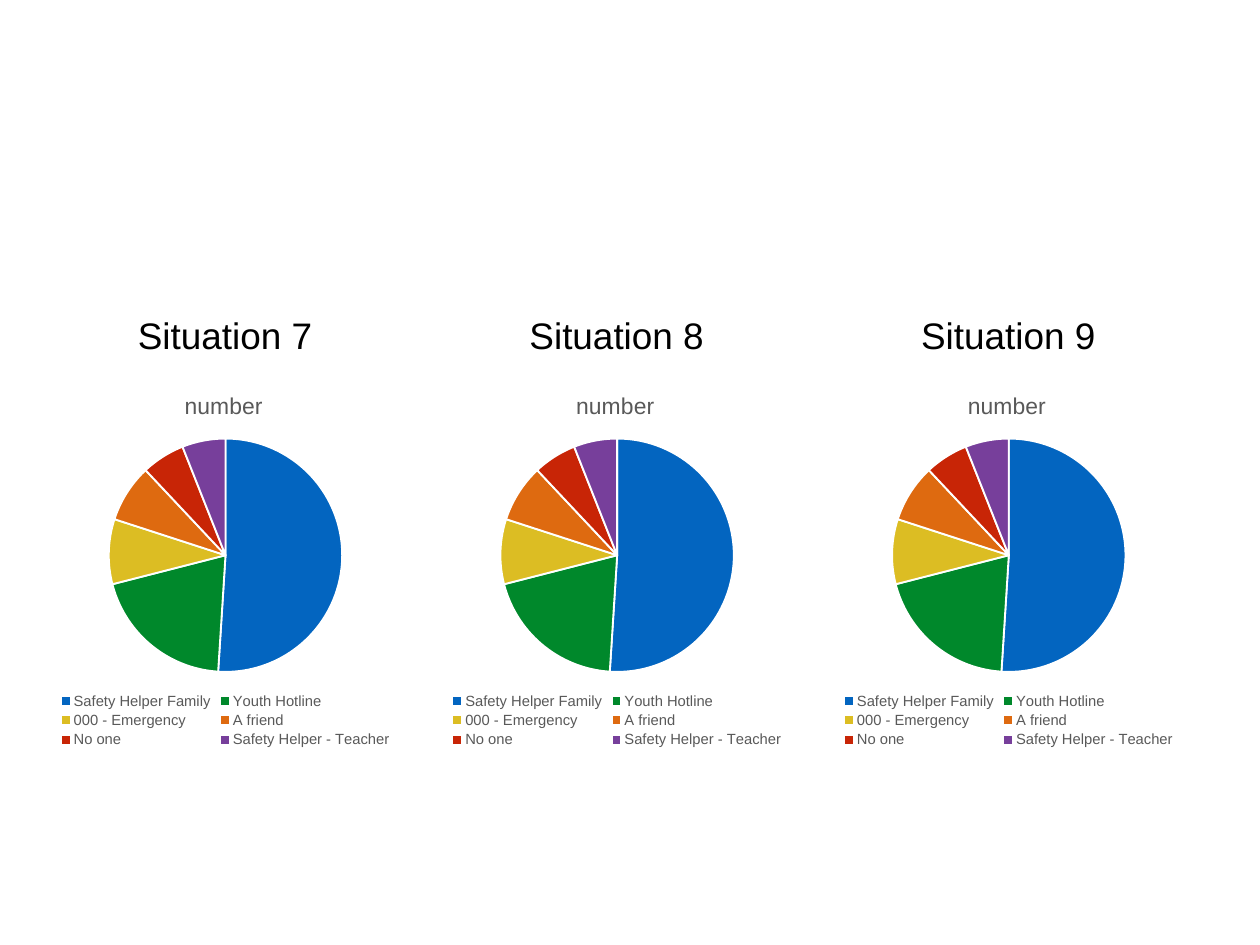
from lxml import etree
from pptx import Presentation
from pptx import util as u
from pptx.chart import data as cd
from pptx.dml.color import RGBColor
from pptx.enum import chart as ch, text as t
from pptx.oxml import ns

INK = {"text": "000000", "grey": "595959", "edge": "FFFFFF"}
# Answers: name, value, slice colour
HELP = [
    ("Safety Helper Family", 51, "0365C0"),
    ("Youth Hotline", 20, "00882B"),
    ("000 - Emergency", 9, "DCBD23"),
    ("A friend", 8, "DE6A10"),
    ("No one", 6, "C82506"),
    ("Safety Helper - Teacher", 6, "773F9B"),
]
WIDE, HIGH = 14.22, 10.67
STEP = 4.42 / WIDE  # column pitch as a share of the width


class Deck:
    face = "Arial"

    def __init__(self):
        self.prs = Presentation()
        self.prs.slide_width = u.Inches(WIDE)
        self.prs.slide_height = u.Inches(HIGH)
        self.slide = self.prs.slides.add_slide(self.prs.slide_layouts[6])

    def box(self, x, y, w, h):
        """Turn shares of the slide into lengths."""
        return (u.Inches(x * WIDE), u.Inches(y * HIGH),
                u.Inches(w * WIDE), u.Inches(h * HIGH))

    def font(self, font, size, ink):
        font.name, font.size, font.bold = self.face, u.Pt(size), False
        font.color.rgb = RGBColor.from_string(INK[ink])

    def label(self, words, *area):
        frame = self.slide.shapes.add_textbox(*self.box(*area)).text_frame
        frame.word_wrap = True
        frame.vertical_anchor = t.MSO_ANCHOR.MIDDLE
        for side in ("left", "top", "right", "bottom"):
            setattr(frame, "margin_" + side, u.Inches(0.06))
        line = frame.paragraphs[0]
        line.text = words
        line.alignment = t.PP_ALIGN.CENTER
        self.font(line.font, 30, "text")

    def place(self, item, **parts):
        """Fix a chart part at shares of the chart's size."""
        old = item.find(ns.qn("c:layout"))
        if old is None:
            old = etree.Element(ns.qn("c:layout"))
            prior = item.find(ns.qn("c:tx"))
            item.insert(0 if prior is None else 1, old)
        spot = etree.SubElement(old, ns.qn("c:manualLayout"))
        for key, val in parts.items():
            etree.SubElement(spot, ns.qn("c:" + key)).set("val", str(val))

    def pie(self, name, rows, *area):
        data = cd.CategoryChartData()
        data.categories = [row[0] for row in rows]
        data.add_series(name, [row[1] for row in rows])
        chart = self.slide.shapes.add_chart(
            ch.XL_CHART_TYPE.PIE, *self.box(*area), data).chart
        self.font(chart.font, 10, "text")

        # Chart title
        chart.has_title = True
        head = chart.chart_title
        head.include_in_layout = False
        line = head.text_frame.paragraphs[0]
        line.text = name
        self.font(line.font, 18.6, "grey")
        self.place(head._element, xMode="edge", yMode="edge", x=0.4, y=0.03)

        # Legend
        chart.has_legend = True
        chart.legend.position = ch.XL_LEGEND_POSITION.BOTTOM
        chart.legend.include_in_layout = False
        self.font(chart.legend.font, 12, "grey")

        # Slices
        plot = chart.plots[0]
        plot.vary_by_categories = True
        for i, row in enumerate(rows):
            look = plot.series[0].points[i].format
            look.fill.solid()
            look.fill.fore_color.rgb = RGBColor.from_string(row[2])
            look.line.color.rgb = RGBColor.from_string(INK["edge"])
            look.line.width = u.Pt(1.5)
        field = chart._chartSpace.find(".//" + ns.qn("c:plotArea"))
        self.place(field, layoutTarget="inner", xMode="edge", yMode="edge",
                   x=0.24, y=0.17, w=0.52, h=0.62)


def main():
    deck = Deck()
    # Pies first, then the headings above them
    for col in range(3):
        deck.pie("number", HELP, col * STEP, 4.23 / HIGH,
                 5.09 / WIDE, 4.25 / HIGH)
    for col in range(3):
        deck.label(f"Situation {col + 7}", 1.07 / WIDE + col * STEP,
                   3.47 / HIGH, 2.94 / WIDE, 0.62 / HIGH)
    deck.prs.save("out.pptx")


if __name__ == "__main__":
    main()
